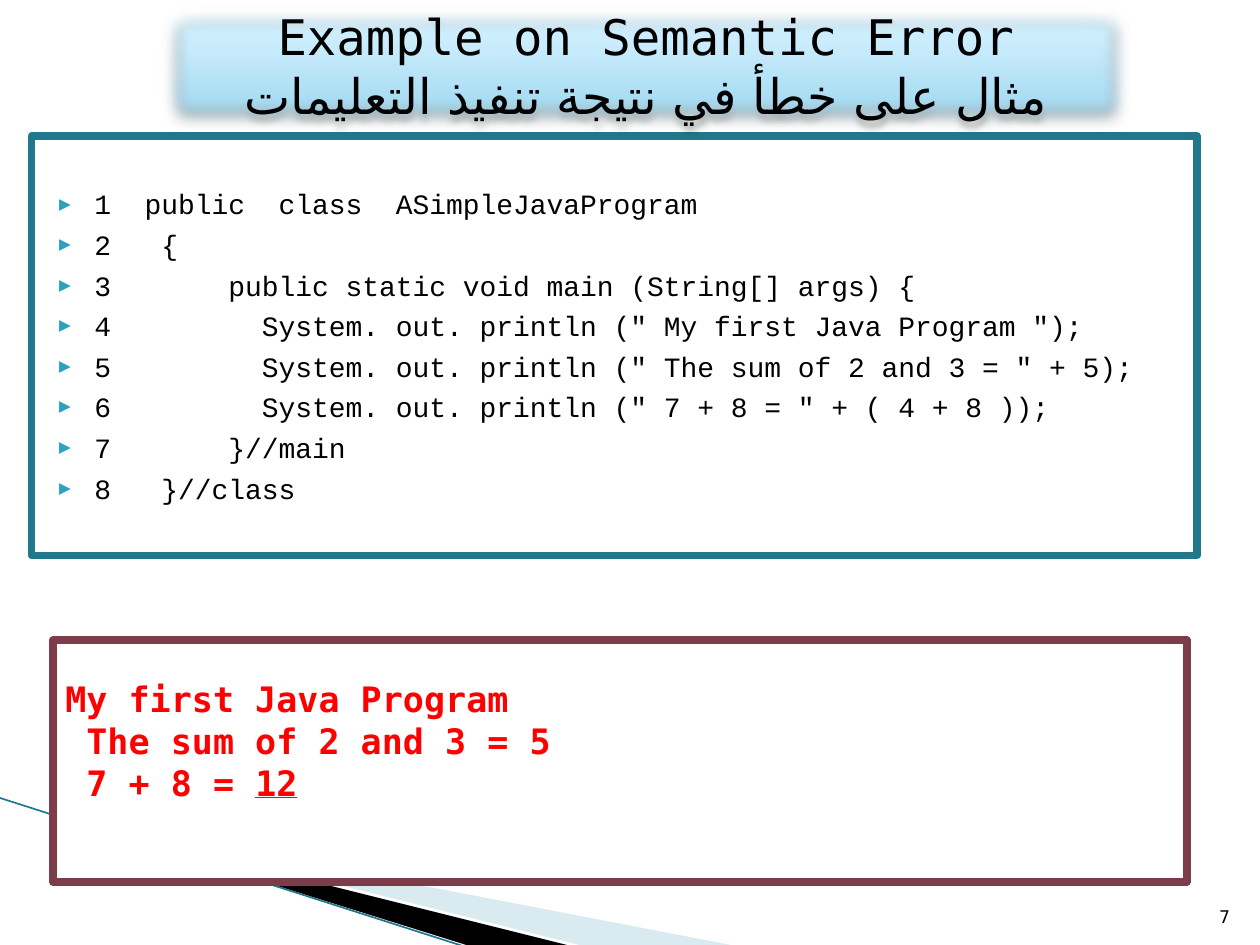
from dataclasses import dataclass

from lxml import etree
from pptx import Presentation
from pptx import util as u
from pptx.dml.color import RGBColor
from pptx.enum import shapes, text
from pptx.oxml import parse_xml
from pptx.oxml.ns import nsdecls, qn

COLUMNS, ROWS = 100, 75
CELL = u.Inches(0.1)


@dataclass(frozen=True)
class Theme:
    ink: str = "000000"
    paper: str = "FFFFFF"
    code_frame: str = "21788D"
    output_frame: str = "7D3C4A"
    output_text: str = "FF0000"
    bullet: str = "2DA2BF"
    pale_wave: str = "A0CBDC"
    banner: tuple = ((0, "96D4EE"), (65, "C9ECFC"), (100, "D7F2FF"))
    mono: str = "DejaVu Sans Mono"
    code: str = "Courier New"
    arabic: str = "DejaVu Sans"
    heading_size: float = 28
    output_size: float = 20
    code_size: float = 16
    number_size: float = 10
    frame_width: float = 4.33
    thin_width: float = 0.95


@dataclass(frozen=True)
class Area:
    column: float
    row: float
    columns: float
    rows: float

    def emu(self) -> list[int]:
        return [grid(n) for n in (self.column, self.row, self.columns, self.rows)]


@dataclass(frozen=True)
class Wave:
    points: tuple
    color: str
    opacity: int = 100


THEME = Theme()
WAVES = (
    Wave(((5.5, 65.1), (58.4, 75.1), (45.6, 75.1), (5.5, 65)), THEME.pale_wave, 40),
    Wave(((5.3, 64.9), (44.9, 75.1), (37, 75.2), (5.4, 65)), THEME.ink),
)
HEADING = ("Example on Semantic Error", "مثال على خطأ في نتيجة تنفيذ التعليمات")
CODE = (
    "1  public  class  ASimpleJavaProgram",
    "2   {",
    "3       public static void main (String[] args) {",
    '4         System. out. println (" My first Java Program ");',
    '5         System. out. println (" The sum of 2 and 3 = " + 5);',
    '6         System. out. println (" 7 + 8 = " + ( 4 + 8 ));',
    "7       }//main",
    "8   }//class",
)
OUTPUT = "My first Java Program\v The sum of 2 and 3 = 5\v 7 + 8 = "


def grid(cells: float) -> int:
    return round(cells * CELL)


def rgb(color: str) -> RGBColor:
    return RGBColor.from_string(color)


def style(para, font: str, size: float, color: str, bold: bool = False) -> None:
    for span in para.runs:
        span.font.name = font
        span.font.size = u.Pt(size)
        span.font.bold = bold
        span.font.color.rgb = rgb(color)
        etree.SubElement(span.font._element, qn("a:cs"), typeface=THEME.arabic)


def add_wave(page, wave: Wave) -> None:
    builder = page.shapes.build_freeform(*wave.points[0], scale=CELL)
    builder.add_line_segments(wave.points[1:], close=True)
    shape = builder.convert_to_shape()
    shape.shadow.inherit = False
    shape.line.fill.background()
    shape.fill.solid()
    shape.fill.fore_color.rgb = rgb(wave.color)
    if wave.opacity < 100:
        color = shape.fill._xPr.find(".//" + qn("a:srgbClr"))
        etree.SubElement(color, qn("a:alpha"), val=str(wave.opacity * 1000))


def add_wave_line(page) -> None:
    ends = [grid(n) for n in (-0.1, 63.3, 37.1, 75.2)]
    line = page.shapes.add_connector(shapes.MSO_CONNECTOR.STRAIGHT, *ends)
    line.line.color.rgb = rgb(THEME.code_frame)
    line.line.width = u.Pt(THEME.thin_width)
    etree.SubElement(line._element.spPr, qn("a:effectLst"))


def add_frame(page, area: Area, color: str, width: float):
    box = page.shapes.add_shape(shapes.MSO_SHAPE.RECTANGLE, *area.emu())
    box.shadow.inherit = False
    box.fill.background()
    box.line.color.rgb = rgb(color)
    box.line.width = u.Pt(width)
    etree.SubElement(box.line._ln, qn("a:round"))
    frame = box.text_frame
    frame.word_wrap = True
    frame.vertical_anchor = text.MSO_ANCHOR.MIDDLE
    frame.paragraphs[0].alignment = text.PP_ALIGN.LEFT
    return box


def add_bullet(para) -> None:
    props = para._p.get_or_add_pPr()
    props.set("marL", str(grid(4)))
    props.set("indent", str(grid(-2.8)))
    color = etree.SubElement(props, qn("a:buClr"))
    etree.SubElement(color, qn("a:srgbClr"), val=THEME.bullet)
    etree.SubElement(props, qn("a:buSzPct"), val="55000")
    etree.SubElement(props, qn("a:buFont"), typeface="DejaVu Sans")
    etree.SubElement(props, qn("a:buChar"), char="▶")


def add_code(page) -> None:
    box = add_frame(page, Area(2.5, 10.8, 92.5, 33.3), THEME.code_frame, THEME.frame_width)
    box.text_frame.text = "\n".join(CODE)
    for index, para in enumerate(box.text_frame.paragraphs):
        para.alignment = text.PP_ALIGN.LEFT
        add_bullet(para)
        if index:
            para.space_before = u.Pt(4)
        style(para, THEME.code, THEME.code_size, THEME.ink)


def add_output(page) -> None:
    box = add_frame(page, Area(4.2, 50.8, 90, 19.2), THEME.output_frame, THEME.frame_width)
    box.fill.solid()
    box.fill.fore_color.rgb = rgb(THEME.paper)
    box.text_frame.margin_bottom = grid(3.8)
    para = box.text_frame.paragraphs[0]
    para.text = OUTPUT
    result = para.add_run()
    result.text = "12"
    style(para, THEME.mono, THEME.output_size, THEME.output_text, bold=True)
    result.font.underline = True


def add_heading(page) -> None:
    box = add_frame(page, Area(12.5, 0, 77.5, 10.4), THEME.bullet, 0.75)
    stops = "".join(
        f'<a:gs pos="{share * 1000}"><a:srgbClr val="{color}"/></a:gs>'
        for share, color in THEME.banner
    )
    box.fill.gradient()
    box.fill.gradient_angle = 90
    old = box.fill._xPr.find(".//" + qn("a:gsLst"))
    old.getparent().replace(old, parse_xml(f"<a:gsLst {nsdecls('a')}>{stops}</a:gsLst>"))
    effects = box._element.spPr.find(qn("a:effectLst"))
    shadow = etree.SubElement(
        effects, qn("a:outerShdw"), blurRad=str(u.Pt(4)), dist=str(u.Pt(3)),
        dir="5400000", rotWithShape="0",
    )
    color = etree.SubElement(shadow, qn("a:srgbClr"), val=THEME.ink)
    etree.SubElement(color, qn("a:alpha"), val="35000")
    etree.SubElement(effects, qn("a:softEdge"), rad="127000")
    box.text_frame.text = "\n".join(HEADING)
    for para in box.text_frame.paragraphs:
        para.alignment = text.PP_ALIGN.CENTER
        style(para, THEME.mono, THEME.heading_size, THEME.ink)


def add_page_number(page) -> None:
    box = page.shapes.add_textbox(*Area(94.6, 70.1, 4, 4).emu())
    frame = box.text_frame
    frame.word_wrap = True
    frame.vertical_anchor = text.MSO_ANCHOR.BOTTOM
    frame.text = "7"
    para = frame.paragraphs[0]
    para.alignment = text.PP_ALIGN.RIGHT
    style(para, THEME.mono, THEME.number_size, THEME.ink)


def main() -> None:
    deck = Presentation()
    deck.slide_width, deck.slide_height = COLUMNS * CELL, ROWS * CELL
    page = deck.slides.add_slide(deck.slide_layouts[6])
    for wave in WAVES:
        add_wave(page, wave)
    add_wave_line(page)
    add_code(page)
    add_output(page)
    add_heading(page)
    add_page_number(page)
    deck.save("out.pptx")


if __name__ == "__main__":
    main()
